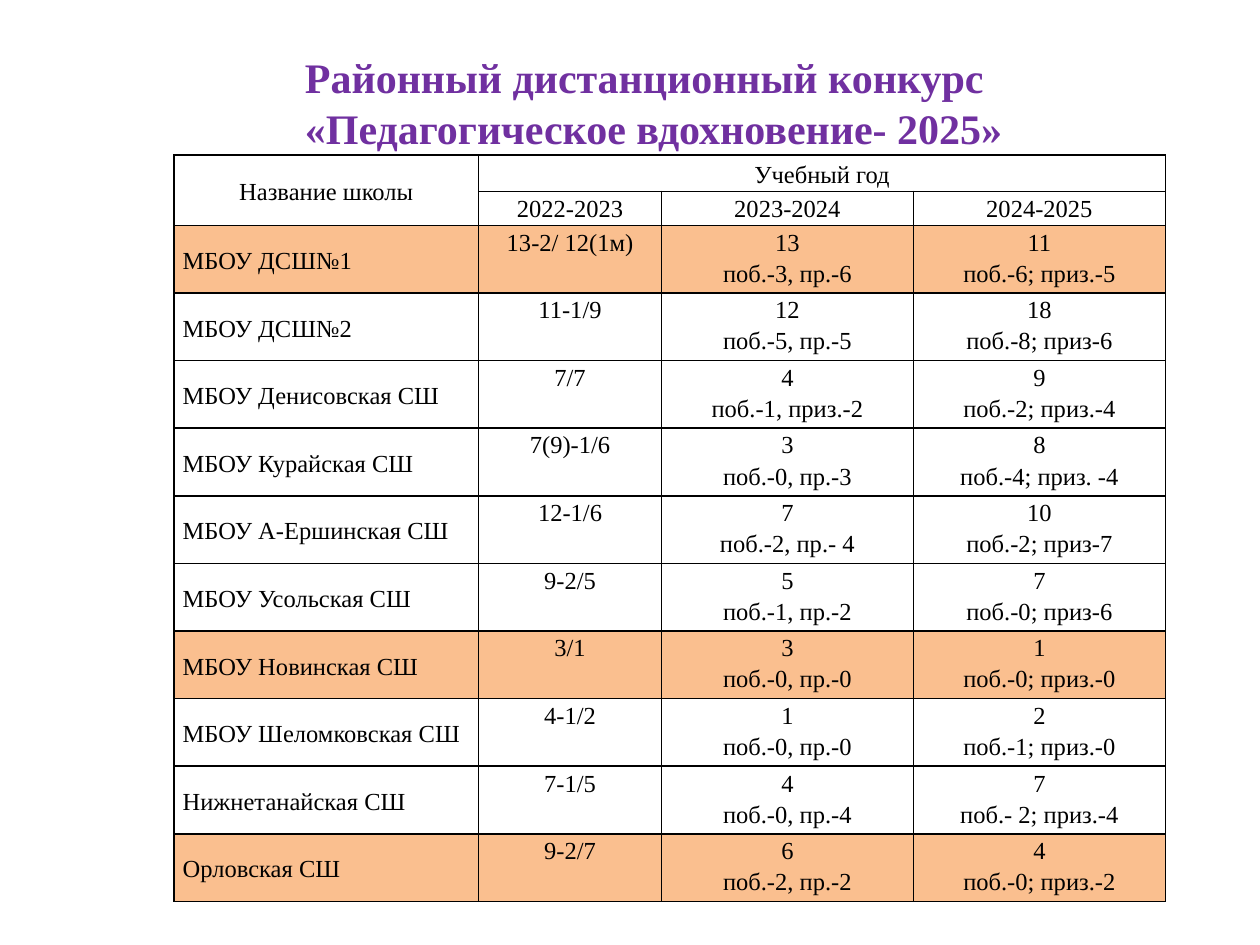
"""Build a slide with a table of school results in a district contest."""
from lxml import etree
from pptx import Presentation
from pptx.dml.color import RGBColor
from pptx.enum.text import MSO_ANCHOR, MSO_AUTO_SIZE, PP_ALIGN
from pptx.oxml.ns import qn
from pptx.util import Inches, Pt

TOP, MIDDLE = MSO_ANCHOR.TOP, MSO_ANCHOR.MIDDLE
LEFT, CENTER = PP_ALIGN.LEFT, PP_ALIGN.CENTER
FIT = MSO_AUTO_SIZE.SHAPE_TO_FIT_TEXT
FONT = "Times New Roman"
COLORS = {"title": "7030A0", "text": "000000", "line": "000000", "mark": "FABF8F"}
WIDTHS = [2.42, 1.45, 2, 2]
ROWS = [
    ["Название школы", "Учебный год", "", ""],
    ["", "2022-2023", "2023-2024", "2024-2025"],
    ["МБОУ ДСШ№1", "13-2/ 12(1м)", "13\nпоб.-3, пр.-6", "11\nпоб.-6; приз.-5"],
    ["МБОУ ДСШ№2", "11-1/9", "12\nпоб.-5, пр.-5", "18\nпоб.-8; приз-6"],
    ["МБОУ Денисовская СШ", "7/7", "4\nпоб.-1, приз.-2", "9\nпоб.-2; приз.-4"],
    ["МБОУ Курайская СШ", "7(9)-1/6", "3\nпоб.-0, пр.-3", "8\nпоб.-4; приз. -4"],
    ["МБОУ А-Ершинская СШ", "12-1/6", "7\nпоб.-2, пр.- 4", "10\nпоб.-2; приз-7"],
    ["МБОУ Усольская СШ", "9-2/5", "5\nпоб.-1, пр.-2", "7\nпоб.-0; приз-6"],
    ["МБОУ Новинская СШ", "3/1", "3\nпоб.-0, пр.-0", "1\nпоб.-0; приз.-0"],
    ["МБОУ Шеломковская СШ", "4-1/2", "1\nпоб.-0, пр.-0", "2\nпоб.-1; приз.-0"],
    ["Нижнетанайская СШ", "7-1/5", "4\nпоб.-0, пр.-4", "7\nпоб.- 2; приз.-4"],
    ["Орловская СШ", "9-2/7", "6\nпоб.-2, пр.-2", "4\nпоб.-0; приз.-2"],
]
HEIGHTS = [0.29, 0.24] + [0.39] * (len(ROWS) - 2)
MARKED = ["МБОУ ДСШ№1", "МБОУ Новинская СШ", "Орловская СШ"]


def style(par, size, color, align, bold=False):
    par.alignment = align
    par.font.name = FONT
    par.font.size = Pt(size)
    par.font.bold = bold
    par.font.color.rgb = RGBColor.from_string(COLORS[color])


def border(cell):
    props = cell._tc.get_or_add_tcPr()
    for side in ("lnL", "lnR", "lnT", "lnB"):
        line = etree.SubElement(props, qn(f"a:{side}"), w=str(Pt(1)))
        fill = etree.SubElement(line, qn("a:solidFill"))
        etree.SubElement(fill, qn("a:srgbClr"), val=COLORS["line"])


prs = Presentation()
prs.slide_width, prs.slide_height = Inches(10), Inches(7.5)
slide = prs.slides.add_slide(prs.slide_layouts[5])

title = slide.shapes.title
title.left, title.top = Inches(2.32), Inches(0.36)
title.width, title.height = Inches(5.82), Inches(0.91)
frame = title.text_frame
frame.text = "Районный дистанционный конкурс\n«Педагогическое вдохновение- 2025»"
frame.word_wrap = False
frame.auto_size = FIT
frame.vertical_anchor = TOP
for par in frame.paragraphs:
    style(par, 24, "title", LEFT, True)

grid = slide.shapes.add_table(
    len(ROWS), len(WIDTHS), Inches(1.38), Inches(1.23), Inches(7.87), Inches(5.93))
table = grid.table
table.first_row = table.horz_banding = False
for col, width in zip(table.columns, WIDTHS):
    col.width = Inches(width)
for row, height in zip(table.rows, HEIGHTS):
    row.height = Inches(height)
grid.height = Inches(5.93)
table.cell(0, 0).merge(table.cell(1, 0))
table.cell(0, 1).merge(table.cell(0, 3))

for r, texts in enumerate(ROWS):
    for c, text in enumerate(texts):
        cell = table.cell(r, c)
        cell.margin_left = cell.margin_right = Inches(0.07)
        cell.margin_top = cell.margin_bottom = 0
        cell.vertical_anchor = MIDDLE if r == 0 or c == 0 else TOP
        border(cell)
        if texts[0] in MARKED:
            cell.fill.solid()
            cell.fill.fore_color.rgb = RGBColor.from_string(COLORS["mark"])
        else:
            cell.fill.background()
        cell.text = text
        for par in cell.text_frame.paragraphs:
            style(par, 14, "text", LEFT if c == 0 and r > 1 else CENTER)
            par.line_spacing = 1.15

prs.save("out.pptx")
